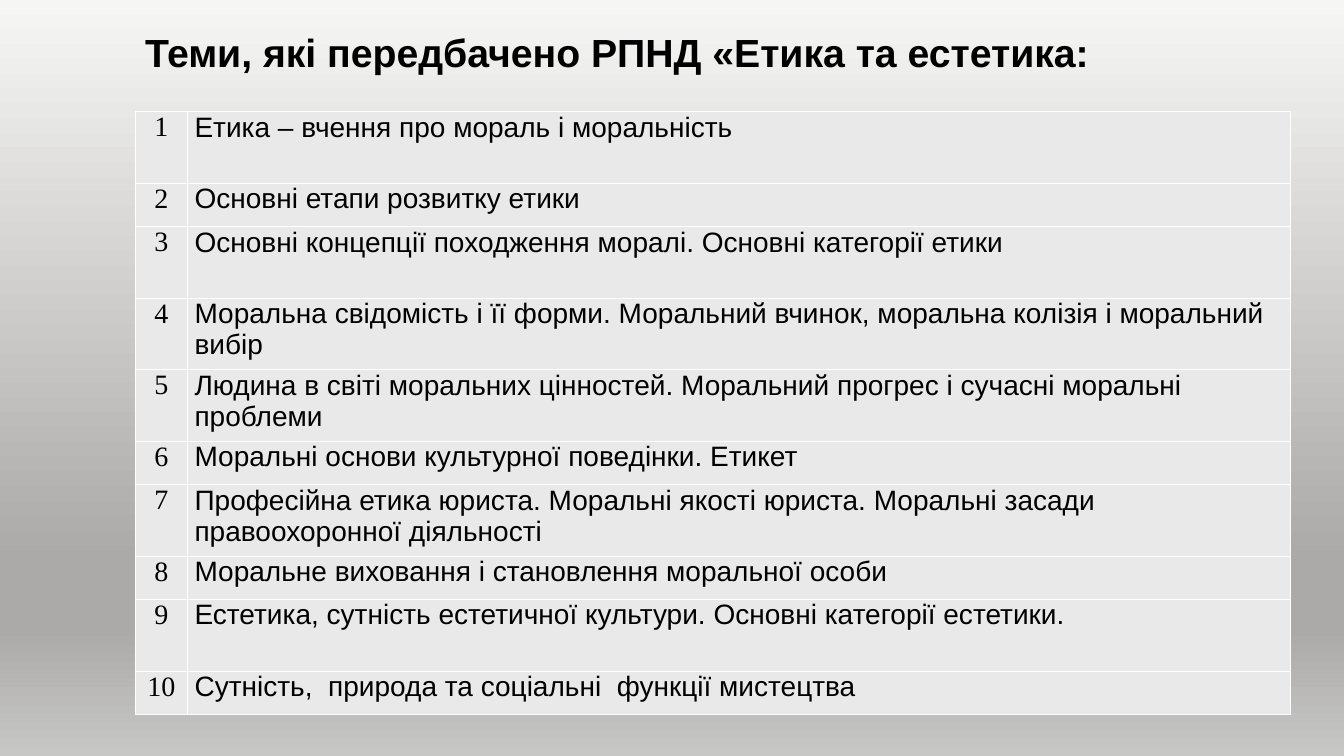
"""Build a slide listing the topics of an ethics and aesthetics course."""
from lxml.etree import SubElement
from pptx import Presentation
from pptx.dml.color import RGBColor
from pptx.enum.text import PP_ALIGN as Align
from pptx.oxml.ns import qn
from pptx.util import Inches, Pt

COLORS = {"ink": "000000", "cell": "E9E9E9", "border": "FFFFFF"}
BACKDROP = {0: "F6F6F5", 74: "ACAAA9", 83: "ACAAA9", 100: "C7C7C6"}
LEFT, TABLE_TOP = 1.34, 1.11
COLUMN_WIDTHS = 0.52, 10.94
SHORT_ROW, TALL_ROW = 0.43, 0.71
TOPICS = [
    ("Етика – вчення про мораль і моральність", TALL_ROW),
    ("Основні етапи розвитку етики", SHORT_ROW),
    ("Основні концепції походження моралі. Основні категорії етики", TALL_ROW),
    ("Моральна свідомість і її форми. Моральний вчинок, моральна колізія і моральний вибір", TALL_ROW),
    ("Людина в світі моральних цінностей. Моральний прогрес і сучасні моральні проблеми", TALL_ROW),
    ("Моральні основи культурної поведінки. Етикет", SHORT_ROW),
    ("Професійна етика юриста. Моральні якості юриста. Моральні засади правоохоронної діяльності", TALL_ROW),
    ("Моральне виховання і становлення моральної особи", SHORT_ROW),
    ("Естетика, сутність естетичної культури. Основні категорії естетики.", TALL_ROW),
    ("Сутність,  природа та соціальні  функції мистецтва", SHORT_ROW),
]


def write(frame, text, font="Arial", size=20, bold=False, align=Align.LEFT):
    frame.word_wrap = True
    paragraph = frame.paragraphs[0]
    paragraph.alignment = align
    run = paragraph.add_run()
    run.text = text
    run.font.name, run.font.size, run.font.bold = font, Pt(size), bold
    run.font.color.rgb = RGBColor.from_string(COLORS["ink"])


def style_cell(cell):
    cell.margin_left = cell.margin_right = Inches(0.07)
    cell.margin_top = cell.margin_bottom = 0
    properties = cell._tc.get_or_add_tcPr()
    for side in ("a:lnL", "a:lnR", "a:lnT", "a:lnB"):
        border = SubElement(properties, qn(side), w=str(Pt(1)))
        paint = SubElement(border, qn("a:solidFill"))
        SubElement(paint, qn("a:srgbClr"), val=COLORS["border"])
    cell.fill.solid()
    cell.fill.fore_color.rgb = RGBColor.from_string(COLORS["cell"])


deck = Presentation()
deck.slide_width, deck.slide_height = Inches(13.33), Inches(7.5)
slide = deck.slides.add_slide(deck.slide_layouts[6])

backdrop = slide.background.fill
backdrop.gradient()
backdrop.gradient_angle = 270
stops = next(slide.element.iter(qn("a:gsLst")))
for stop in list(stops):
    stops.remove(stop)
for percent, color in BACKDROP.items():
    stop = SubElement(stops, qn("a:gs"), pos=str(percent * 1000))
    SubElement(stop, qn("a:srgbClr"), val=color)

title = slide.shapes.add_textbox(Inches(LEFT), Inches(0.23), Inches(9.68), Inches(0.88))
write(title.text_frame, "Теми, які передбачено РПНД «Етика та естетика:", size=28, bold=True)

topic_table = slide.shapes.add_table(
    len(TOPICS), len(COLUMN_WIDTHS), Inches(LEFT), Inches(TABLE_TOP),
    Inches(sum(COLUMN_WIDTHS)), Inches(sum(height for _, height in TOPICS))).table
for column, width in zip(topic_table.columns, COLUMN_WIDTHS):
    column.width = Inches(width)
for number, (topic, height) in enumerate(TOPICS, start=1):
    row = topic_table.rows[number - 1]
    row.height = Inches(height)
    number_cell, topic_cell = row.cells
    write(number_cell.text_frame, str(number), font="Times New Roman", align=Align.CENTER)
    write(topic_cell.text_frame, topic)
    for cell in row.cells:
        style_cell(cell)

deck.save("out.pptx")
